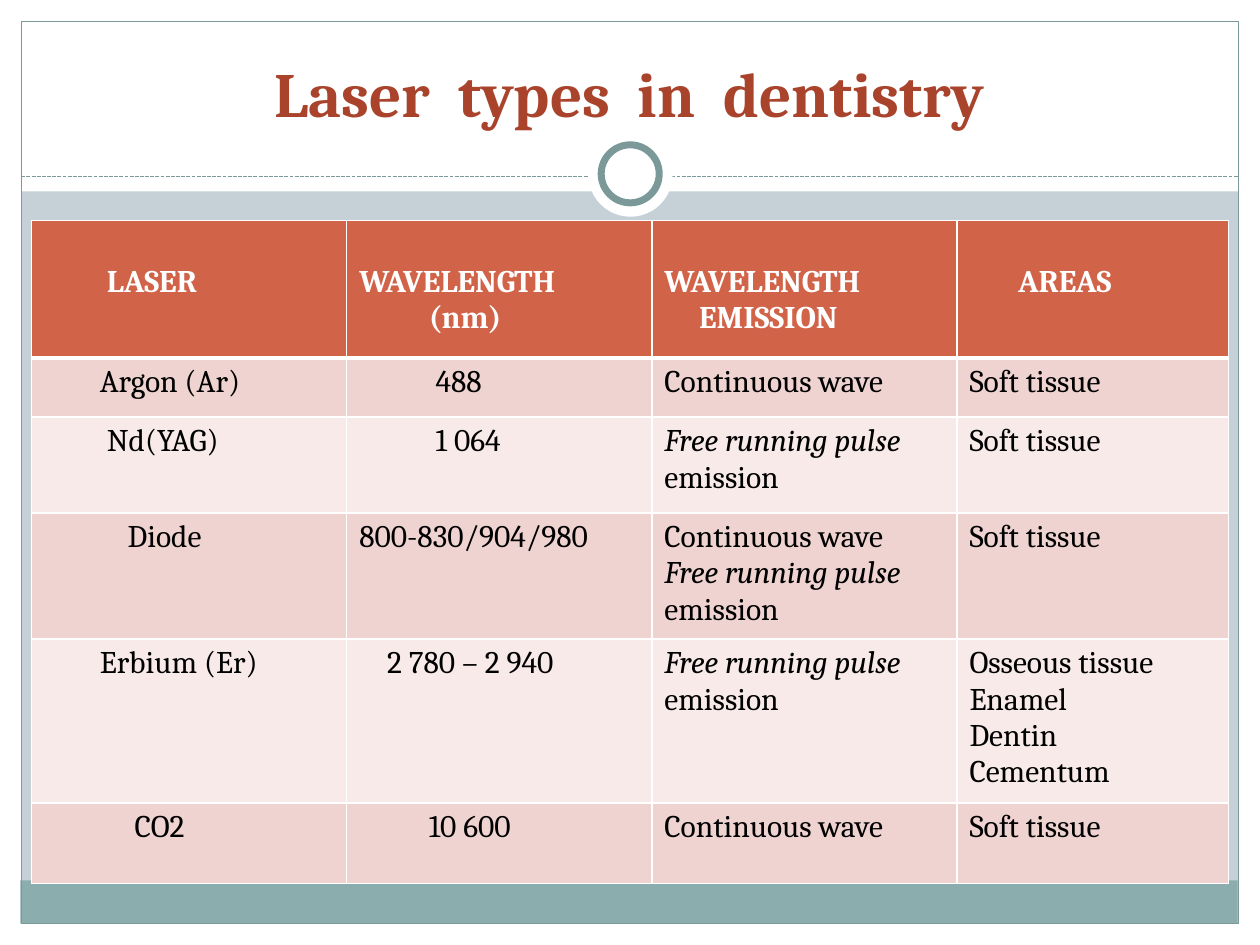
"""Build the slide on laser types in dentistry."""
from dataclasses import dataclass

from lxml import etree
from pptx import Presentation
from pptx import util as u
from pptx.dml.color import RGBColor
from pptx.enum import dml, shapes, text
from pptx.oxml.ns import qn

COLORS = {
    "white": "FFFFFF", "black": "000000", "background": "C5D1D7",
    "footer": "8CADAE", "frame": "7C999A", "title": "A9432B",
    "header": "D16349", "odd": "EED3D0", "even": "F7EAE9",
}
FONT = "Cambria"
PULSE = "Free running pulse"
INDENT_STEP = 0.14
COLUMNS = (6.35, 6.15, 6.15, 5.48)


@dataclass(frozen=True)
class Panel:
    left: float
    top: float
    width: float
    height: float
    fill: str | None = "white"
    line: float = 0
    kind: shapes.MSO_SHAPE = shapes.MSO_SHAPE.RECTANGLE


@dataclass(frozen=True)
class Entry:
    lines: tuple[str, ...]
    indents: tuple[int, ...] = (0,)


@dataclass(frozen=True)
class Row:
    height: float
    entries: tuple[Entry, ...]


EDGES = (
    Panel(0, 18.62, 25.4, 0.43),
    Panel(0, 0, 25.4, 3.86),
    Panel(0, 0, 0.43, 19.05),
    Panel(24.97, 0, 0.43, 19.05),
    Panel(0.41, 17.75, 24.54, 0.87, "footer"),
    Panel(0.43, 0.43, 24.54, 18.19, None, 0.75),
)
RING = (
    Panel(11.86, 2.67, 1.7, 1.7, kind=shapes.MSO_SHAPE.OVAL),
    Panel(12.12, 2.92, 1.17, 1.17, line=4, kind=shapes.MSO_SHAPE.OVAL),
)
CONTINUOUS = "Continuous wave"
PULSED = f"{PULSE} emission"
SOFT = Entry(("Soft tissue",))
ROWS = (
    Row(2.77, (Entry(("LASER",), (9,)), Entry(("WAVELENGTH", "(nm)"), (0, 10)),
               Entry(("WAVELENGTH", "EMISSION"), (0, 5)), Entry(("AREAS",), (7,)))),
    Row(1.19, (Entry(("Argon (Ar)",), (8,)), Entry(("488",), (11,)),
               Entry((CONTINUOUS,)), SOFT)),
    Row(1.93, (Entry(("Nd(YAG)",), (9,)), Entry(("1 064",), (11,)),
               Entry((PULSED,)), SOFT)),
    Row(2.54, (Entry(("Diode",), (12,)), Entry(("800-830/904/980",)),
               Entry((CONTINUOUS, PULSED), (0, 0)), SOFT)),
    Row(3.3, (Entry(("Erbium (Er)",), (8,)), Entry(("2 780 – 2 940",), (4,)),
              Entry((PULSED,)),
              Entry(("Osseous tissue", "Enamel", "Dentin", "Cementum"), (0,) * 4))),
    Row(1.63, (Entry(("CO2",), (13,)), Entry(("10 600",), (10,)),
               Entry((CONTINUOUS,)), SOFT)),
)


def color(name: str) -> RGBColor:
    """Return the named colour."""
    return RGBColor.from_string(COLORS[name])


def style(para, size: float, name: str, bold: bool) -> None:
    """Set the font of a whole paragraph."""
    font = para.font
    font.name, font.size, font.bold = FONT, u.Pt(size), bold
    font.color.rgb = color(name)


def draw_panel(page, panel: Panel) -> None:
    """Draw one plain shape."""
    shape = page.shapes.add_shape(
        panel.kind, u.Cm(panel.left), u.Cm(panel.top), u.Cm(panel.width), u.Cm(panel.height))
    shape.shadow.inherit = False
    if panel.fill:
        shape.fill.solid()
        shape.fill.fore_color.rgb = color(panel.fill)
    else:
        shape.fill.background()
    if panel.line:
        shape.line.color.rgb = color("frame")
        shape.line.width = u.Pt(panel.line)
    else:
        shape.line.fill.background()


def draw_divider(page) -> None:
    """Draw the dashed line below the title."""
    divider = page.shapes.add_connector(
        shapes.MSO_CONNECTOR.STRAIGHT, u.Cm(0.43), u.Cm(3.56), u.Cm(24.97), u.Cm(3.56))
    divider.line.color.rgb = color("frame")
    divider.line.width = u.Pt(0.75)
    divider.line.dash_style = dml.MSO_LINE.SQUARE_DOT
    etree.SubElement(divider._element.spPr, qn("a:effectLst"))


def draw_title(page) -> None:
    """Write the slide title."""
    box = page.shapes.add_textbox(u.Cm(0.84), u.Cm(0.64), u.Cm(23.7), u.Cm(2.11))
    frame = box.text_frame
    frame.word_wrap = True
    frame.vertical_anchor = text.MSO_ANCHOR.BOTTOM
    para = frame.paragraphs[0]
    para.text = "Laser  types  in  dentistry"
    para.alignment = text.PP_ALIGN.CENTER
    style(para, 36, "title", True)


def add_borders(cell, bottom: float) -> None:
    """Give a cell white borders."""
    properties = cell._tc.get_or_add_tcPr()
    for side, width in (("L", 1), ("R", 1), ("T", 1), ("B", bottom)):
        line = etree.SubElement(properties, qn(f"a:ln{side}"), w=str(u.Pt(width)))
        fill = etree.SubElement(line, qn("a:solidFill"))
        etree.SubElement(fill, qn("a:srgbClr"), val=COLORS["white"])


def fill_cell(cell, entry: Entry, index: int) -> None:
    """Write and colour one table cell."""
    header = index == 0
    add_borders(cell, 3 if header else 1)
    cell.fill.solid()
    cell.fill.fore_color.rgb = color("header" if header else "odd" if index % 2 else "even")
    if header:
        cell.margin_top = u.Cm(0.87)
    frame = cell.text_frame
    for number, (line, indent) in enumerate(zip(entry.lines, entry.indents)):
        para = frame.add_paragraph() if number else frame.paragraphs[0]
        para._p.get_or_add_pPr().set("marL", str(u.Cm(INDENT_STEP * indent)))
        style(para, 18, "white" if header else "black", header)
        for part in filter(None, line.partition(PULSE)):
            span = para.add_run()
            span.text = part
            if part == PULSE:
                span.font.italic = True


def draw_table(page) -> None:
    """Draw the table of lasers."""
    heights = [row.height for row in ROWS]
    table = page.shapes.add_table(
        len(ROWS), len(COLUMNS), u.Cm(0.64), u.Cm(4.45),
        u.Cm(sum(COLUMNS)), u.Cm(sum(heights))).table
    for column, width in zip(table.columns, COLUMNS):
        column.width = u.Cm(width)
    for index, row in enumerate(ROWS):
        table.rows[index].height = u.Cm(row.height)
        for position, entry in enumerate(row.entries):
            fill_cell(table.cell(index, position), entry, index)


def main() -> None:
    """Build and save the deck."""
    deck = Presentation()
    deck.slide_width, deck.slide_height = u.Cm(25.4), u.Cm(19.05)
    page = deck.slides.add_slide(deck.slide_layouts[6])
    page.background.fill.solid()
    page.background.fill.fore_color.rgb = color("background")
    for panel in EDGES:
        draw_panel(page, panel)
    draw_divider(page)
    for panel in RING:
        draw_panel(page, panel)
    draw_title(page)
    draw_table(page)
    deck.save("out.pptx")


if __name__ == "__main__":
    main()
